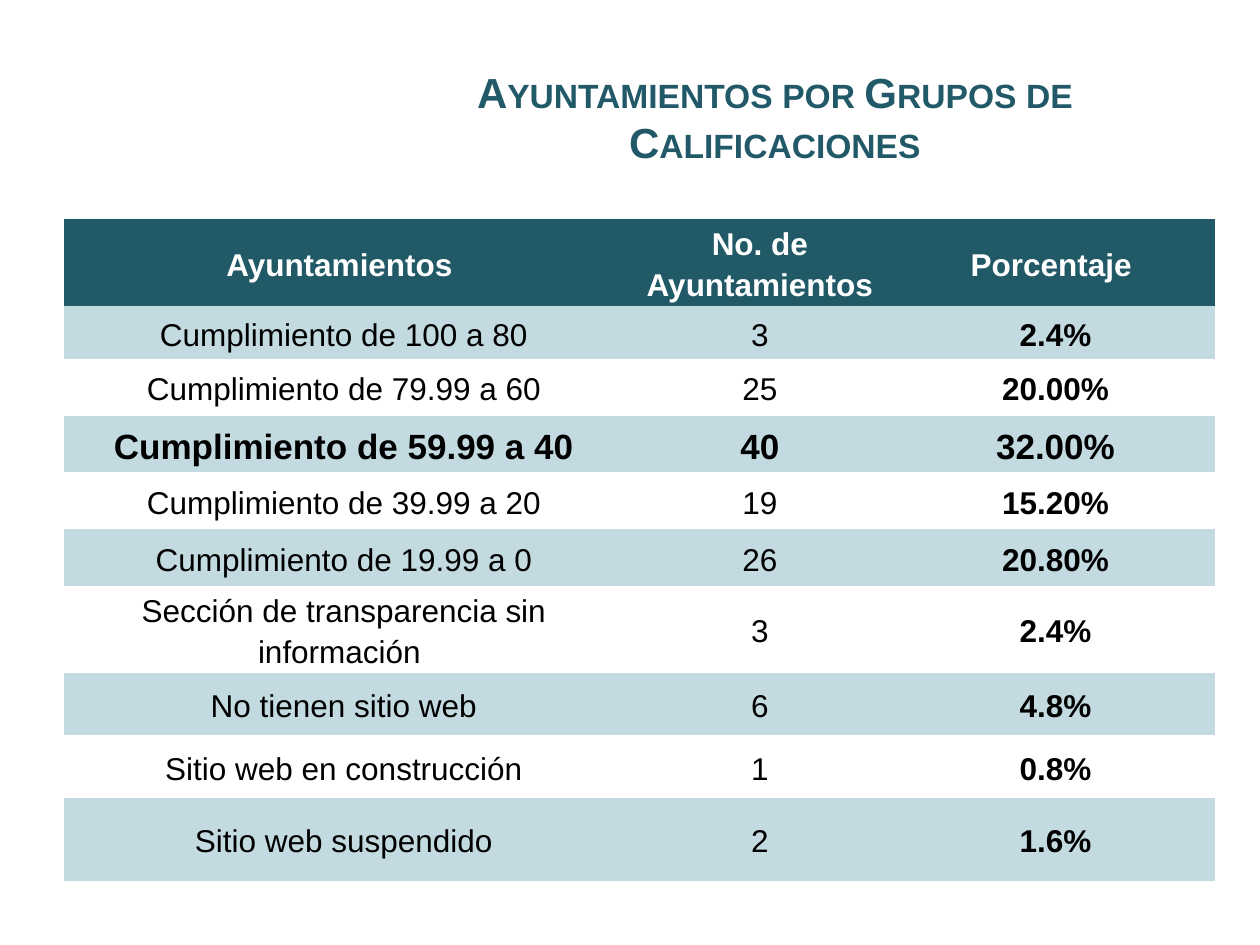
"""Build a slide with a table of town councils by score group."""
from pptx import Presentation
from pptx.dml.color import RGBColor
from pptx.enum.text import MSO_ANCHOR, PP_ALIGN
from pptx.oxml.ns import qn
from pptx.util import Pt

COLORS = {"title": "215968", "header": "215967", "band": "C2DAE0",
          "white": "FFFFFF", "black": "000000"}
NO_GRID_STYLE = "{2D5ABB26-0587-4C30-8999-92F81FD0307C}"
COLUMN_WIDTHS = [319.5, 156, 182]
ROW_HEIGHTS = [48, 30.3, 32.4, 32.4, 32.4, 32.4, 47.5, 35.7, 35.7, 47.5]
ROWS = [
    ("Ayuntamientos ", "No. de Ayuntamientos", "Porcentaje "),
    ("Cumplimiento de 100 a 80", "3", "2.4%"),
    ("Cumplimiento de 79.99 a 60", "25", "20.00%"),
    ("Cumplimiento de 59.99 a 40", "40", "32.00%"),
    ("Cumplimiento de 39.99 a 20", "19", "15.20%"),
    ("Cumplimiento de 19.99 a 0", "26", "20.80%"),
    ("Sección de transparencia sin información ", "3", "2.4%"),
    ("No tienen sitio web", "6", "4.8%"),
    ("Sitio web en construcción", "1", "0.8%"),
    ("Sitio web suspendido", "2", "1.6%"),
]
HEADER_ROW, LARGEST_GROUP_ROW, PERCENT_COLUMN = 0, 3, 2


def add_run(tf, text, size, color, bold):
    p = tf.paragraphs[0]
    p.alignment = PP_ALIGN.CENTER
    r = p.add_run()
    r.text = text
    r.font.name = "Arial"
    r.font.size = Pt(size)
    r.font.bold = bold
    r.font.color.rgb = RGBColor.from_string(COLORS[color])
    return p, r


prs = Presentation()
prs.slide_width, prs.slide_height = Pt(720), Pt(540)
s = prs.slides.add_slide(prs.slide_layouts[6])

sp = s.shapes.add_textbox(Pt(201.6), Pt(21.6), Pt(482.4), Pt(90))
tf = sp.text_frame
tf.word_wrap = True
tf.vertical_anchor = MSO_ANCHOR.MIDDLE
p, r = add_run(tf, "Ayuntamientos por Grupos de Calificaciones", 24, "title", True)
r.font._element.set("cap", "small")

table = s.shapes.add_table(len(ROWS), len(COLUMN_WIDTHS), Pt(36.7), Pt(125.2),
                           Pt(sum(COLUMN_WIDTHS)), Pt(sum(ROW_HEIGHTS))).table
table._tbl.tblPr.find(qn("a:tableStyleId")).text = NO_GRID_STYLE
for column, width in zip(table.columns, COLUMN_WIDTHS):
    column.width = Pt(width)
for row, height in zip(table.rows, ROW_HEIGHTS):
    row.height = Pt(height)

for i, texts in enumerate(ROWS):
    for j, text in enumerate(texts):
        cell = table.cell(i, j)
        cell.vertical_anchor = MSO_ANCHOR.MIDDLE
        cell.margin_left = cell.margin_right = Pt(3.6)
        cell.margin_top = cell.margin_bottom = Pt(0)
        if i == HEADER_ROW or i % 2:
            cell.fill.solid()
            fill = "header" if i == HEADER_ROW else "band"
            cell.fill.fore_color.rgb = RGBColor.from_string(COLORS[fill])
        else:
            cell.fill.background()
        p, r = add_run(cell.text_frame, text,
                       20 if i == LARGEST_GROUP_ROW else 18,
                       "white" if i == HEADER_ROW else "black",
                       i in (HEADER_ROW, LARGEST_GROUP_ROW) or j == PERCENT_COLUMN)
        p.line_spacing = 1.15

prs.save("out.pptx")
